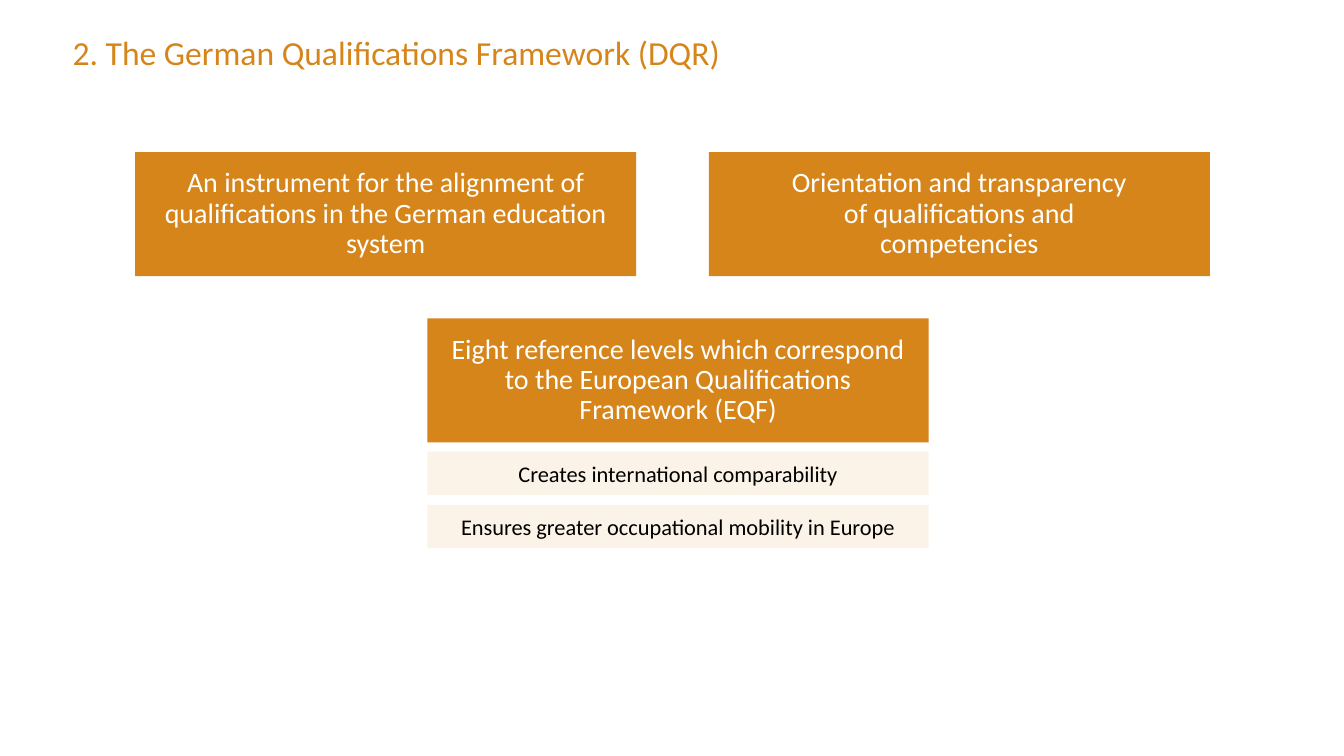
import pptx
import pptx.util
from pptx.dml.color import RGBColor
from pptx.enum.shapes import MSO_SHAPE
from pptx.enum.text import MSO_ANCHOR, PP_ALIGN
from pptx.util import Inches, Pt

ORANGE = RGBColor(0xD6, 0x85, 0x1B)
CREAM = RGBColor(0xFB, 0xF3, 0xE8)
WHITE = RGBColor(0xFF, 0xFF, 0xFF)
BLACK = RGBColor(0, 0, 0)

TITLE = "2. The German Qualifications Framework (DQR)"
# Left, top and wording of each main statement
STATEMENTS = [
    (1.34, 1.51, "An instrument for the alignment of qualifications in the German education system"),
    (7.03, 1.51, "Orientation and transparency\nof qualifications and\ncompetencies"),
    (4.24, 3.16, "Eight reference levels which correspond to the European Qualifications Framework (EQF)"),
]
BENEFITS = [
    "Creates international comparability",
    "Ensures greater occupational mobility in Europe",
]

BOX_WIDTH = 4.97
STATEMENT_HEIGHT = 1.23
BENEFIT_HEIGHT = 0.43
BENEFIT_LEFT, BENEFIT_TOP, BENEFIT_PITCH = 4.24, 4.48, 0.53


def write(shape, wording, size, color, margin_x, margin_y):
    frame = shape.text_frame
    frame.word_wrap = True
    frame.margin_left = frame.margin_right = Inches(margin_x)
    frame.margin_top = frame.margin_bottom = Inches(margin_y)
    paragraph = frame.paragraphs[0]
    paragraph.text = wording
    paragraph.font.name = "Calibri"
    paragraph.font.size = Pt(size)
    paragraph.font.color.rgb = color
    return paragraph


def add_box(slide, left, top, height, fill, wording, size, color, margin_x, margin_y):
    box = slide.shapes.add_shape(
        MSO_SHAPE.RECTANGLE, Inches(left), Inches(top), Inches(BOX_WIDTH), Inches(height))
    box.shadow.inherit = False
    box.fill.solid()
    box.fill.fore_color.rgb = fill
    box.line.fill.background()
    box.text_frame.vertical_anchor = MSO_ANCHOR.MIDDLE
    paragraph = write(box, wording, size, color, margin_x, margin_y)
    paragraph.alignment = PP_ALIGN.CENTER
    return paragraph


def main():
    deck = pptx.Presentation()
    deck.slide_width, deck.slide_height = Inches(13.33), Inches(7.5)
    slide = deck.slides.add_slide(deck.slide_layouts[6])

    title = slide.shapes.add_textbox(Inches(0.72), Inches(0.32), Inches(9.84), Inches(0.49))
    write(title, TITLE, 24, ORANGE, 0, 0)

    for left, top, wording in STATEMENTS:
        statement = add_box(slide, left, top, STATEMENT_HEIGHT, ORANGE, wording, 20, WHITE, 0.12, 0.12)
        statement.line_spacing = 0.9

    for row, wording in enumerate(BENEFITS):
        add_box(slide, BENEFIT_LEFT, BENEFIT_TOP + row * BENEFIT_PITCH, BENEFIT_HEIGHT,
                CREAM, wording, 16, BLACK, 0.04, 0.08)

    deck.save("out.pptx")


if __name__ == "__main__":
    main()
